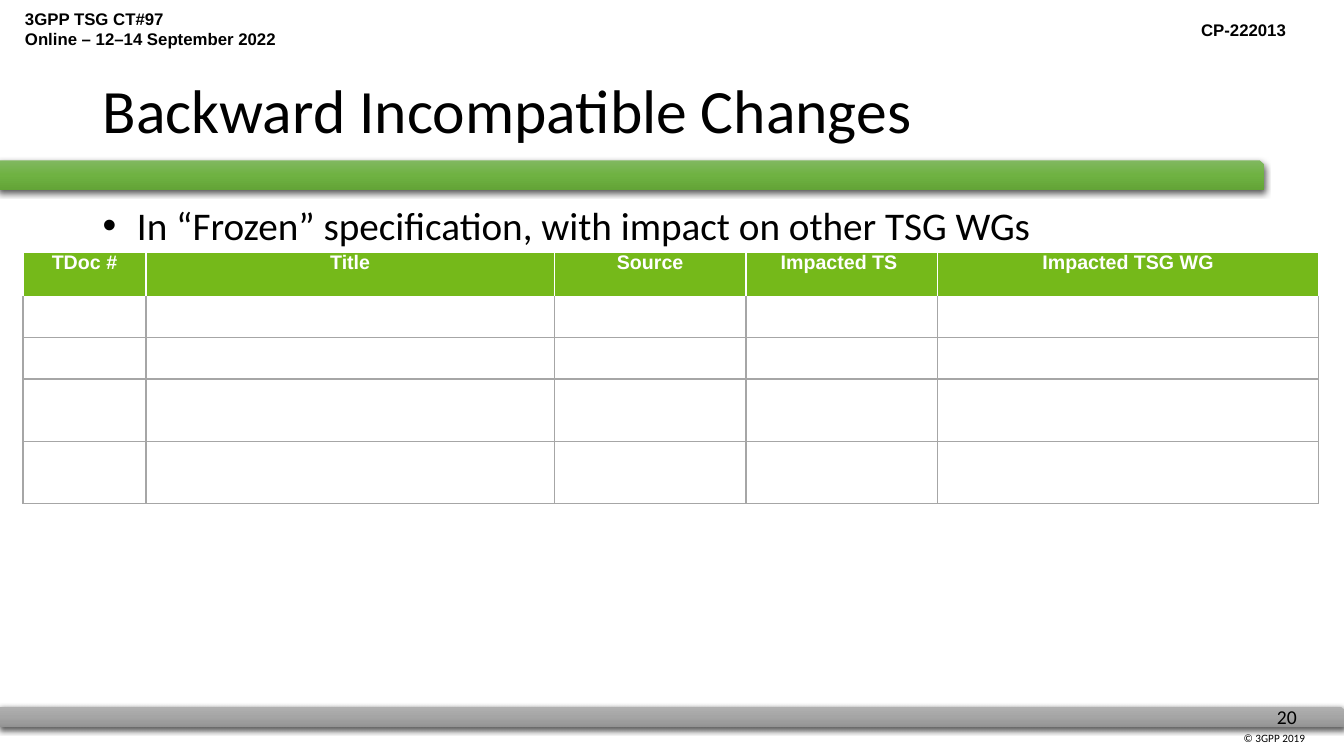
from copy import deepcopy
from dataclasses import dataclass

from lxml.etree import SubElement
from pptx import Presentation
from pptx.dml.color import RGBColor
from pptx.enum.shapes import MSO_SHAPE as Preset
from pptx.enum.text import MSO_ANCHOR as Anchor, PP_ALIGN as Align
from pptx.oxml import parse_xml
from pptx.oxml.ns import nsdecls, qn
from pptx.util import Cm, Pt

BLACK, WHITE, GREEN, GREY = "000000", "FFFFFF", "75B91A", "A6A6A6"


@dataclass
class Bar:
    left: float
    top: float
    width: float
    height: float
    stops: tuple[str, str, str]


@dataclass
class Label:
    left: float
    top: float
    width: float
    height: float
    lines: tuple[str, ...]
    size: int
    font: str = "Calibri"
    bold: bool = False
    align: Align = Align.LEFT
    anchor: Anchor = Anchor.TOP
    spacing: float = 1.0
    wrap: bool = True
    bullet: str = ""


@dataclass
class Column:
    heading: str
    width: float


BARS = [
    Bar(0, 17.81, 33.88, 0.51, ("AFAFAF", "A5A5A5", "939393")),
    Bar(-0.03, 4.04, 31.9, 0.76, ("81B861", "6FB242", "62A336")),
]
LABELS = [
    Label(31.09, 18.31, 2.74, 0.58, ("© 3GPP 2019",), 8),
    Label(31.93, 17.65, 1.09, 0.86, ("20",), 14, wrap=False),
    Label(0.38, 0.1, 8.79, 1.27,
          ("3GPP TSG CT#97", "Online – 12–14 September 2022"), 12, "Arial", True),
    Label(25.45, 0.38, 7.21, 1.8, ("CP-222013",), 12, "Arial", True, Align.RIGHT),
    Label(2.34, 1.02, 29.21, 3.68, ("Backward Incompatible Changes",), 44,
          anchor=Anchor.MIDDLE, spacing=0.9),
    Label(2.34, 5.08, 29.21, 1.96,
          (" In “Frozen” specification, with impact on other TSG WGs",), 28,
          spacing=0.9, bullet="•"),
]
COLUMNS = [
    Column("TDoc #", 3.1),
    Column("Title", 10.29),
    Column("Source", 4.83),
    Column("Impacted TS ", 4.83),
    Column("Impacted TSG WG", 9.6),
]
ROW_HEIGHTS = [1.12, 1.04, 1.04, 1.57, 1.57]


def colour(value: str) -> RGBColor:
    return RGBColor.from_string(value)


def add_span(para, text: str, size: int, font: str, tint: str, bold: bool) -> None:
    span = para.add_run()
    span.text = text
    span.font.size = Pt(size)
    span.font.name = font
    span.font.bold = bold
    span.font.color.rgb = colour(tint)


def draw_bar(page, bar: Bar) -> None:
    shape = page.shapes.add_shape(Preset.SNIP_1_RECTANGLE, Cm(bar.left), Cm(bar.top),
                                  Cm(bar.width), Cm(bar.height))
    shape.line.fill.background()

    # Vertical three-stop gradient
    shape.fill.gradient()
    shape.fill.gradient_angle = 270
    stop_list = shape._element.spPr.find(".//" + qn("a:gsLst"))
    stop_list.append(deepcopy(stop_list[0]))
    for index, (stop, tint) in enumerate(zip(shape.fill.gradient_stops, bar.stops)):
        stop.position = index / 2
        stop.color.rgb = colour(tint)

    # Soft shadow below
    shape.shadow.inherit = False
    effects = shape._element.spPr.find(qn("a:effectLst"))
    effects.append(parse_xml(
        f'<a:outerShdw {nsdecls("a")} blurRad="{Pt(4.5)}" dist="{Pt(1.5)}" '
        f'dir="5400000" algn="ctr" rotWithShape="0"><a:srgbClr val="{BLACK}">'
        '<a:alpha val="63000"/></a:srgbClr></a:outerShdw>'))


def add_bullet(para, symbol: str) -> None:
    properties = para._p.get_or_add_pPr()
    properties.set("marL", str(Cm(0.64)))
    properties.set("indent", str(-Cm(0.64)))
    SubElement(properties, qn("a:buFont"), typeface="Arial")
    SubElement(properties, qn("a:buChar"), char=symbol)


def draw_label(page, label: Label) -> None:
    box = page.shapes.add_textbox(Cm(label.left), Cm(label.top),
                                  Cm(label.width), Cm(label.height))
    frame = box.text_frame
    frame.word_wrap = label.wrap
    frame.vertical_anchor = label.anchor
    for index, line in enumerate(label.lines):
        para = frame.add_paragraph() if index else frame.paragraphs[0]
        if label.bullet:
            add_bullet(para, label.bullet)
        para.alignment = label.align
        para.line_spacing = label.spacing
        add_span(para, line, label.size, label.font, BLACK, label.bold)


def set_borders(cell, tint: str, top_tint: str) -> None:
    properties = cell._tc.get_or_add_tcPr()
    for side in "LRTB":
        line = SubElement(properties, qn(f"a:ln{side}"), w=str(Pt(1)))
        fill = SubElement(line, qn("a:solidFill"))
        SubElement(fill, qn("a:srgbClr"), val=top_tint if side == "T" else tint)


def draw_table(page, left: float, top: float) -> None:
    width = sum(column.width for column in COLUMNS)
    table = page.shapes.add_table(len(ROW_HEIGHTS), len(COLUMNS), Cm(left), Cm(top),
                                  Cm(width), Cm(sum(ROW_HEIGHTS))).table
    table.first_row = table.horz_banding = False
    for row, height in zip(table.rows, ROW_HEIGHTS):
        row.height = Cm(height)
    for number, column in enumerate(COLUMNS):
        table.columns[number].width = Cm(column.width)
        for index in range(len(ROW_HEIGHTS)):
            cell = table.cell(index, number)
            cell.margin_left = cell.margin_right = Cm(0.13)
            cell.margin_top = cell.margin_bottom = 0
            set_borders(cell, GREY if index else WHITE, GREY if index > 1 else WHITE)
            if index:
                cell.fill.background()
                continue
            cell.fill.solid()
            cell.fill.fore_color.rgb = colour(GREEN)
            para = cell.text_frame.paragraphs[0]
            para.alignment = Align.CENTER
            add_span(para, column.heading, 14, "Arial", WHITE, True)


def main() -> None:
    deck = Presentation()
    deck.slide_width, deck.slide_height = Cm(33.87), Cm(19.05)
    page = deck.slides.add_slide(deck.slide_layouts[6])
    page.background.fill.solid()
    page.background.fill.fore_color.rgb = colour(WHITE)

    # Bars, then texts, then the table of changes
    for bar in BARS:
        draw_bar(page, bar)
    for label in LABELS:
        draw_label(page, label)
    draw_table(page, 0.58, 6.35)
    deck.save("out.pptx")


if __name__ == "__main__":
    main()
